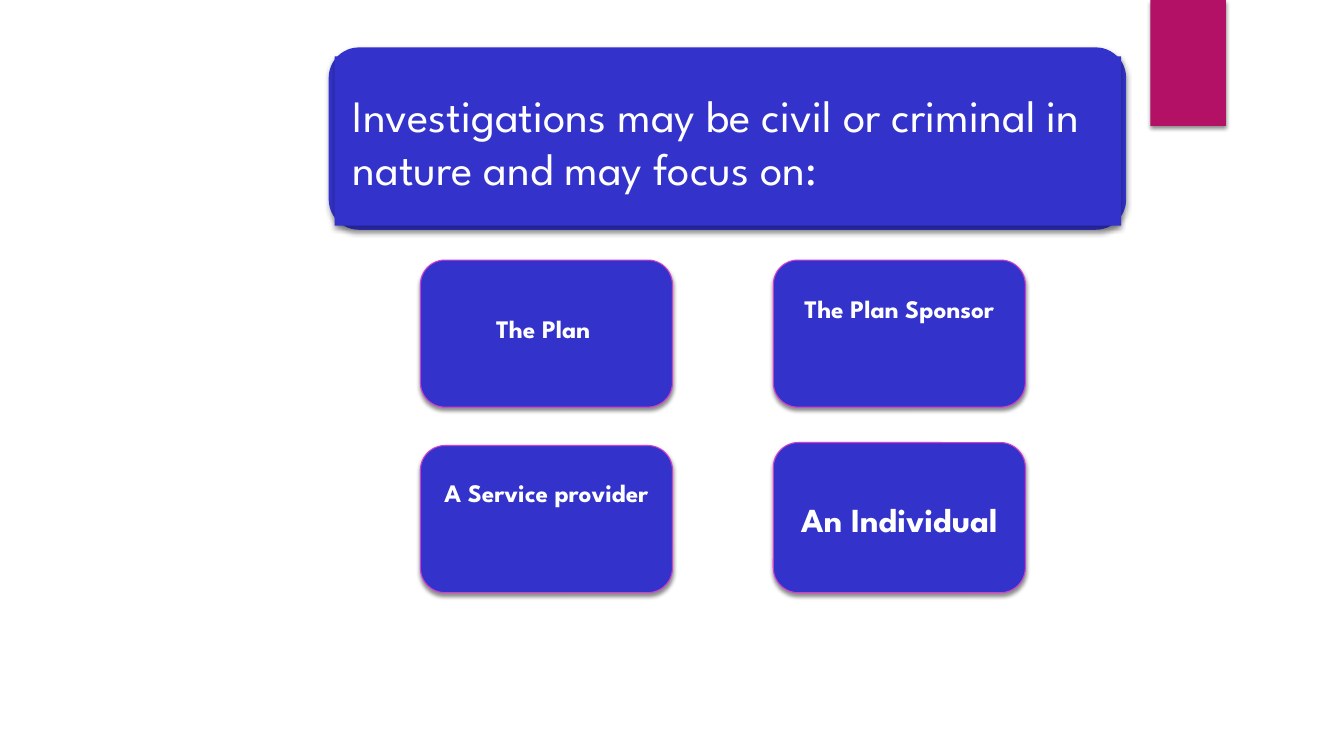
"""Build the slide on the possible subjects of an investigation."""
from dataclasses import dataclass

from lxml import etree
from pptx import Presentation
from pptx.dml.color import RGBColor
from pptx.enum.shapes import MSO_SHAPE
from pptx.enum.text import MSO_ANCHOR, MSO_AUTO_SIZE, PP_ALIGN
from pptx.oxml.ns import qn
from pptx.shapes.autoshape import Shape
from pptx.shapes.shapetree import SlideShapes
from pptx.text.text import TextFrame
from pptx.util import Inches, Pt

RECTANGLE = MSO_SHAPE.RECTANGLE
ROUNDED = MSO_SHAPE.ROUNDED_RECTANGLE
TOP, MIDDLE = MSO_ANCHOR.TOP, MSO_ANCHOR.MIDDLE
LEFT, CENTER = PP_ALIGN.LEFT, PP_ALIGN.CENTER
GROW = MSO_AUTO_SIZE.SHAPE_TO_FIT_TEXT

FONT = "League Spartan"
BLUE, PINK, MAGENTA, WHITE = "3333CC", "D53DD0", "B31166", "FFFFFF"
TITLE_ONLY = 5
CARD_WIDTH = 2.5


@dataclass(frozen=True)
class Box:
    left: float
    top: float
    width: float
    height: float

    def lengths(self) -> tuple[Inches, Inches, Inches, Inches]:
        return Inches(self.left), Inches(self.top), Inches(self.width), Inches(self.height)


@dataclass(frozen=True)
class Shadow:
    opacity: int
    blur: float
    distance: float


@dataclass(frozen=True)
class Subject:
    label: str
    card: Box
    label_box: Box
    wrap: bool = True


CARD_SHADOW = Shadow(45, 3, 2)
HEADING_SHADOW = Shadow(32, 3.5, 2.2)

COLUMNS = (4.17, 7.67)
UPPER, LOWER = 2.58, 4.42
SUBJECTS = (
    Subject("The Plan ", Box(COLUMNS[0], UPPER, CARD_WIDTH, 1.46), Box(4.78, 3.06, 1.28, 0.4), wrap=False),
    Subject("The Plan Sponsor", Box(COLUMNS[1], UPPER, CARD_WIDTH, 1.46), Box(7.67, 2.86, CARD_WIDTH, 0.4)),
    Subject("A Service provider", Box(COLUMNS[0], LOWER, CARD_WIDTH, 1.46), Box(4.29, 4.69, 2.26, 0.71)),
)
INDIVIDUAL = Subject(
    "An Individual", Box(COLUMNS[1], 4.39, CARD_WIDTH, 1.49), Box(7.67, 4.9, CARD_WIDTH, 0.5)
)


def color(value: str) -> RGBColor:
    return RGBColor.from_string(value)


def add_shadow(shape: Shape, shadow: Shadow) -> None:
    shape.shadow.inherit = False
    effects = shape.element.spPr.find(qn("a:effectLst"))
    outer = etree.SubElement(
        effects,
        qn("a:outerShdw"),
        blurRad=str(Pt(shadow.blur)),
        dist=str(Pt(shadow.distance)),
        dir="5400000",
        algn="ctr",
        rotWithShape="0",
    )
    black = etree.SubElement(outer, qn("a:srgbClr"), val="000000")
    etree.SubElement(black, qn("a:alpha"), val=str(shadow.opacity * 1000))


def add_panel(
    shapes: SlideShapes, preset: MSO_SHAPE, box: Box, fill: str, shadow: Shadow, outline: str | None = None
) -> Shape:
    panel = shapes.add_shape(preset, *box.lengths())
    panel.fill.solid()
    panel.fill.fore_color.rgb = color(fill)
    if outline:
        panel.line.color.rgb = color(outline)
        panel.line.width = Pt(0.75)
    else:
        panel.line.fill.background()
    add_shadow(panel, shadow)
    return panel


def write(
    frame: TextFrame, text: str, size: int, bold: bool, align: PP_ALIGN, anchor: MSO_ANCHOR, wrap: bool = True
) -> None:
    frame.text = text
    frame.word_wrap = wrap
    frame.vertical_anchor = anchor
    paragraph = frame.paragraphs[0]
    paragraph.alignment = align
    font = paragraph.runs[0].font
    font.name, font.size, font.bold = FONT, Pt(size), bold
    font.color.rgb = color(WHITE)


def add_card(shapes: SlideShapes, subject: Subject) -> None:
    add_panel(shapes, ROUNDED, subject.card, BLUE, CARD_SHADOW, PINK)


def add_individual(shapes: SlideShapes) -> None:
    add_card(shapes, INDIVIDUAL)
    title = shapes.title
    title.left, title.top, title.width, title.height = INDIVIDUAL.label_box.lengths()
    write(title.text_frame, INDIVIDUAL.label, 24, True, CENTER, TOP)
    title.text_frame.auto_size = GROW
    title.element.getparent().append(title.element)


def add_heading(shapes: SlideShapes) -> None:
    add_panel(shapes, ROUNDED, Box(3.26, 0.47, 7.91, 1.81), BLUE, HEADING_SHADOW)
    heading = add_panel(shapes, RECTANGLE, Box(3.32, 0.56, 7.8, 1.68), BLUE, HEADING_SHADOW)
    frame = heading.text_frame
    frame.margin_left = frame.margin_right = Inches(0.18)
    frame.margin_top = frame.margin_bottom = Inches(0.09)
    write(
        frame, "Investigations may be civil or criminal in nature and may focus on:", 32, False, LEFT, MIDDLE
    )


def add_subject(shapes: SlideShapes, subject: Subject) -> None:
    add_card(shapes, subject)
    label = shapes.add_textbox(*subject.label_box.lengths())
    write(label.text_frame, subject.label, 18, True, CENTER, TOP, subject.wrap)
    label.text_frame.auto_size = GROW


def main() -> None:
    presentation = Presentation()
    presentation.slide_width, presentation.slide_height = Inches(13.33), Inches(7.5)
    shapes = presentation.slides.add_slide(presentation.slide_layouts[TITLE_ONLY]).shapes
    add_panel(shapes, RECTANGLE, Box(11.41, 0, 0.75, 1.25), MAGENTA, CARD_SHADOW)
    add_individual(shapes)
    add_heading(shapes)
    for subject in SUBJECTS:
        add_subject(shapes, subject)
    presentation.save("out.pptx")


if __name__ == "__main__":
    main()
